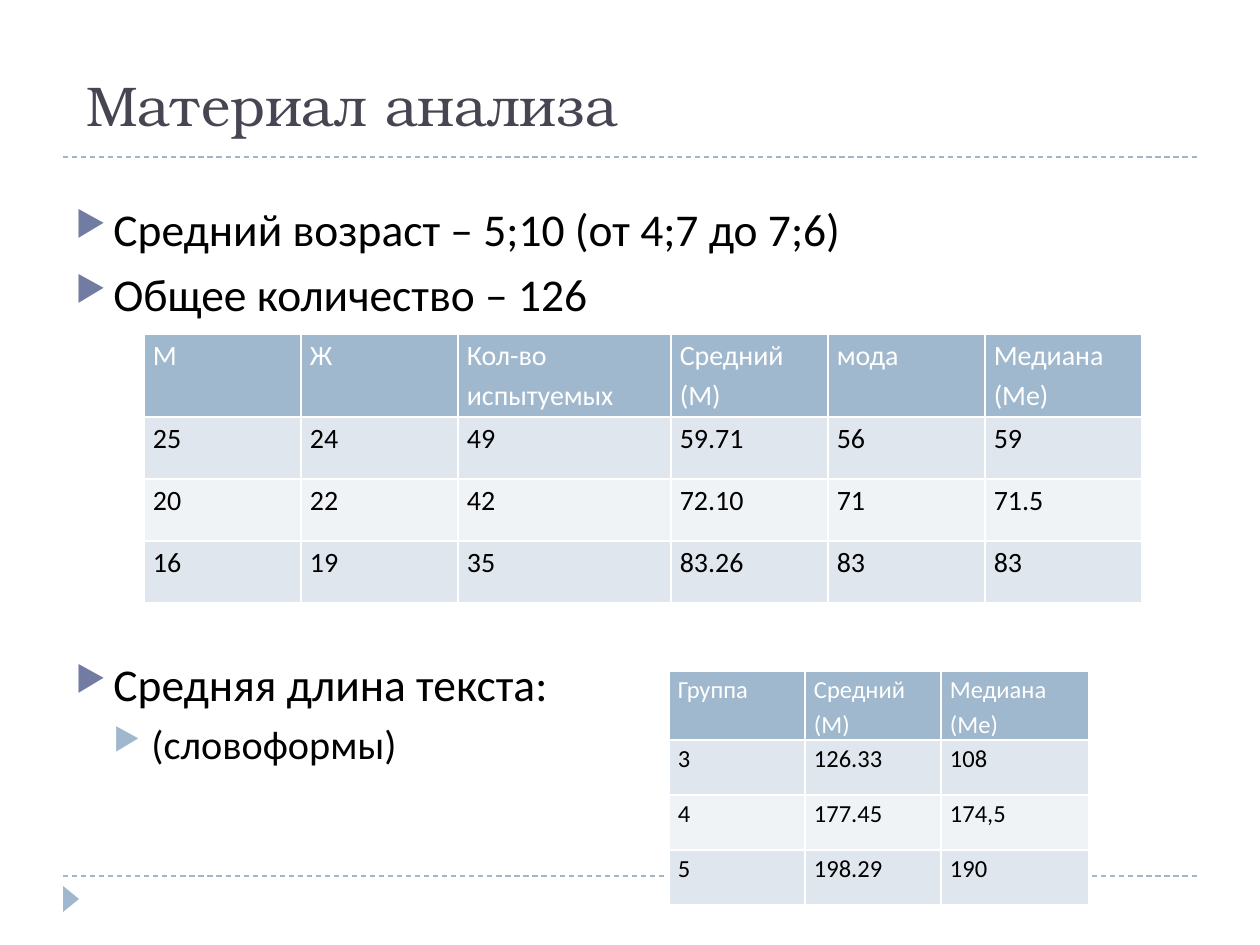
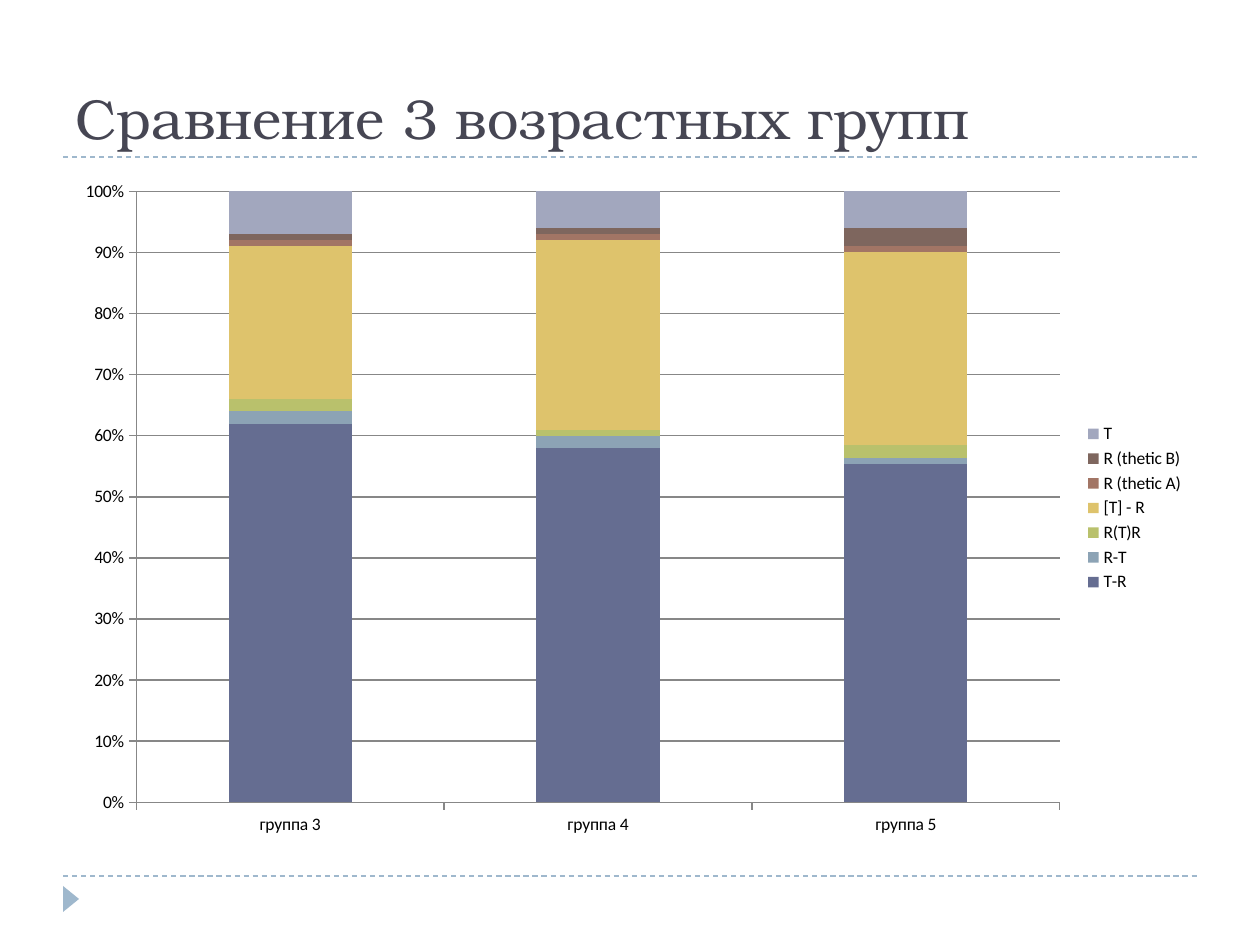
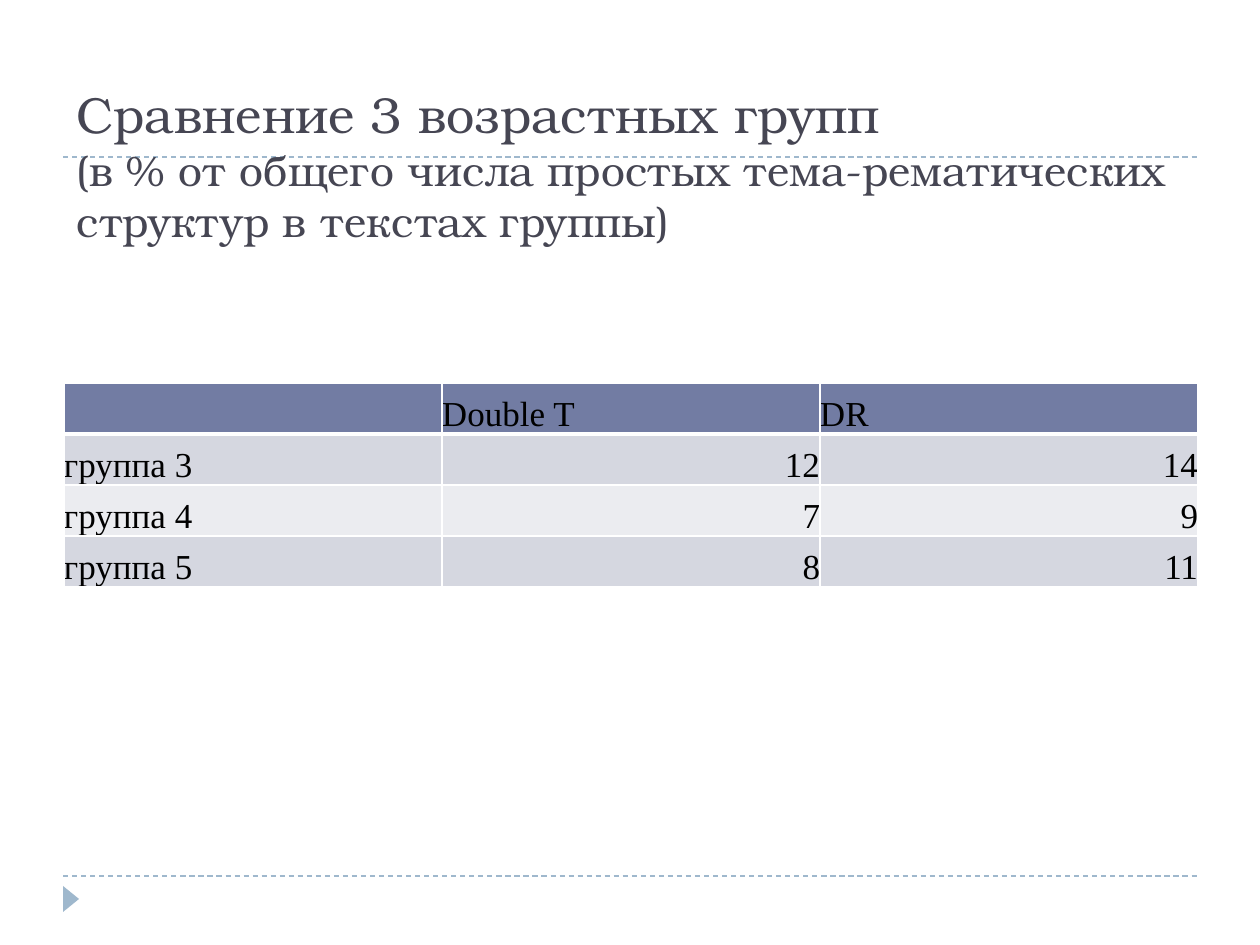
from lxml import etree
from pptx import Presentation
from pptx import util as u
from pptx.chart.data import CategoryChartData
from pptx.dml.color import RGBColor
from pptx.enum import chart as ch, dml, shapes, text
from pptx.oxml.ns import qn

PX_PER_INCH = 126
SANS, SERIF, TIMES = "Calibri", "TeX Gyre Bonum", "Times New Roman"
BLACK, WHITE, TITLE = "000000", "FFFFFF", "464653"
SLATE, SKY, GRID = "727CA3", "9FB8CD", "878787"
SKY_BANDS = ("DFE6ED", "F0F3F6")
SLATE_BANDS = ("D5D7E0", "EBECF0")
BULLETS = (
    {"size": 26, "indent": 38, "before": 6, "mark": SLATE},
    {"size": 23, "indent": 76, "before": 5, "mark": SKY},
)

AGE_ROWS = (
    ("М", "Ж", "Кол-во испытуемых", "Средний (M)", "мода", "Медиана (Me)"),
    ("25", "24", "49", "59.71", "56", "59"),
    ("20", "22", "42", "72.10", "71", "71.5"),
    ("16", "19", "35", "83.26", "83", "83"),
)
LENGTH_ROWS = (
    ("Группа", "Средний (M)", "Медиана (Me)"),
    ("3", "126.33", "108"),
    ("4", "177.45", "174,5"),
    ("5", "198.29", "190"),
)
DOUBLE_ROWS = (
    ("", "Double T", "DR"),
    ("группа 3", "12", "14"),
    ("группа 4", "7", "9"),
    ("группа 5", "8", "11"),
)
GROUPS = ("группа 3", "группа 4", "группа 5")
STRUCTURES = (
    ("T-R", (62, 58, 56), "656D91"),
    ("R-T", (2, 2, 1), "8CA3B5"),
    ("R(T)R", (2, 1, 2), "B9C16C"),
    ("[T] - R", (25, 31, 32), "DEC36C"),
    ("R (thetic A)", (1, 1, 1), "A27565"),
    ("R (thetic B)", (1, 1, 3), "7E665E"),
    ("T", (7, 6, 6), "A2A7BE"),
)


def px(length):
    """Turn px into EMU."""
    return u.Emu(round(length * 914400 / PX_PER_INCH))


def box(*lengths):
    """Turn left, top, width and height in px into EMU."""
    return [px(length) for length in lengths]


def rgb(color):
    """Turn a hex string into a colour."""
    return RGBColor.from_string(color)


def style_font(font, size, face, color):
    """Set size, typeface and colour of a font."""
    font.size = u.Pt(size)
    font.name = face
    font.color.rgb = rgb(color)


def add_run(paragraph, words, size, face, color):
    """Append one styled run."""
    run = paragraph.add_run()
    run.text = words
    style_font(run.font, size, face, color)


def add_rule(slide, top):
    """Draw a dashed rule across the slide."""
    rule = slide.shapes.add_connector(
        shapes.MSO_CONNECTOR.STRAIGHT, px(63), px(top), px(1197), px(top))
    rule.line.color.rgb = rgb(SKY)
    rule.line.width = u.Pt(0.75)
    rule.line.dash_style = dml.MSO_LINE.DASH
    etree.SubElement(rule._element.spPr, qn("a:effectLst"))


def add_frame(deck):
    """Add a blank slide with both rules and the footer marker."""
    slide = deck.slides.add_slide(deck.slide_layouts[6])
    add_rule(slide, 876)
    add_rule(slide, 157)
    marker = slide.shapes.add_shape(
        shapes.MSO_SHAPE.ISOSCELES_TRIANGLE, *box(58, 891, 26, 16))
    marker.rotation = 90
    marker.shadow.inherit = False
    marker.fill.solid()
    marker.fill.fore_color.rgb = rgb(SKY)
    marker.line.fill.background()
    return slide


def add_title(slide, place, *lines):
    """Add a bottom-anchored title from (words, size) lines."""
    frame = slide.shapes.add_textbox(*box(*place)).text_frame
    frame.word_wrap = True
    frame.vertical_anchor = text.MSO_ANCHOR.BOTTOM
    heading = frame.paragraphs[0]
    for number, (words, size) in enumerate(lines):
        if number:
            heading.add_line_break()
        add_run(heading, words, size, SERIF, TITLE)


def add_bullets(slide, place, *items):
    """Add bulleted paragraphs from (words, level) items."""
    frame = slide.shapes.add_textbox(*box(*place)).text_frame
    frame.word_wrap = True
    for number, (words, level) in enumerate(items):
        look = BULLETS[level]
        item = frame.add_paragraph() if number else frame.paragraphs[0]
        item.level = level
        item.space_before = u.Pt(look["before"])
        props = item._p.get_or_add_pPr()
        props.set("marL", str(px(look["indent"])))
        props.set("indent", str(-px(38)))
        mark = etree.SubElement(props, qn("a:buClr"))
        etree.SubElement(mark, qn("a:srgbClr"), val=look["mark"])
        etree.SubElement(props, qn("a:buSzPct"), val="76000")
        etree.SubElement(props, qn("a:buChar"), char="▶")
        add_run(item, words, look["size"], SANS, BLACK)


def add_border(cell, side, points):
    """Give one side of a cell a white border."""
    edge = etree.SubElement(
        cell._tc.get_or_add_tcPr(), qn(f"a:ln{side}"), w=str(u.Pt(points)))
    fill = etree.SubElement(edge, qn("a:solidFill"))
    etree.SubElement(fill, qn("a:srgbClr"), val=WHITE)


def add_grid(slide, corner, widths, heights, rows, *, size, face=SANS,
             head=SKY, head_ink=WHITE, bands=SKY_BANDS, inset=9,
             spacing=1.15, rule=1, anchor=text.MSO_ANCHOR.TOP,
             numbers=text.PP_ALIGN.LEFT):
    """Add a banded table with a coloured header row."""
    table = slide.shapes.add_table(
        len(rows), len(widths),
        *box(*corner, sum(widths), sum(heights))).table
    table.first_row = table.horz_banding = False
    for column, width in zip(table.columns, widths):
        column.width = px(width)
    for r, (height, values) in enumerate(zip(heights, rows)):
        table.rows[r].height = px(height)
        for c, value in enumerate(values):
            cell = table.cell(r, c)
            cell.margin_left = cell.margin_right = px(inset)
            cell.margin_top = cell.margin_bottom = 0
            cell.vertical_anchor = anchor
            for side in "LRTB":
                at_rule = (r, side) in ((0, "B"), (1, "T"))
                add_border(cell, side, rule if at_rule else 1)
            cell.fill.solid()
            cell.fill.fore_color.rgb = rgb(bands[(r - 1) % 2] if r else head)
            entry = cell.text_frame.paragraphs[0]
            entry.line_spacing = spacing
            if r and c:
                entry.alignment = numbers
            if value:
                add_run(entry, value, size, face, BLACK if r else head_ink)


def add_share_chart(slide, place):
    """Add the stacked shares of structures by group."""
    shares = CategoryChartData()
    shares.categories = GROUPS
    for name, values, _ in STRUCTURES:
        shares.add_series(name, values)
    chart = slide.shapes.add_chart(
        ch.XL_CHART_TYPE.COLUMN_STACKED_100, *box(*place), shares).chart
    style_font(chart.font, 10, SANS, BLACK)
    chart.has_title = False
    chart.has_legend = True
    chart.legend.position = ch.XL_LEGEND_POSITION.RIGHT
    chart.legend.include_in_layout = False
    plot = chart.plots[0]
    plot.vary_by_categories = False
    plot.gap_width = 150
    plot.overlap = 100
    for series, (_, _, color) in zip(plot.series, STRUCTURES):
        series.format.fill.solid()
        series.format.fill.fore_color.rgb = rgb(color)
    scale = chart.value_axis
    scale.has_major_gridlines = True
    scale.tick_labels.number_format = "0%"
    scale.tick_labels.number_format_is_linked = False
    for axis in (scale, chart.category_axis):
        axis.major_tick_mark = ch.XL_TICK_MARK.OUTSIDE
    for part in (scale, chart.category_axis, scale.major_gridlines):
        part.format.line.color.rgb = rgb(GRID)
        part.format.line.width = u.Pt(0.75)


def build_material(deck):
    """Build the slide on the analysed material."""
    slide = add_frame(deck)
    add_title(slide, (74, 55, 1134, 89), ("Материал анализа", 32))
    add_bullets(slide, (63, 195, 1134, 135),
                ("Средний возраст – 5;10 (от 4;7 до 7;6)", 0),
                ("Общее количество – 126", 0))
    add_bullets(slide, (63, 650, 600, 135),
                ("Средняя длина текста:", 0), ("(словоформы)", 1))
    add_grid(slide, (144, 334), (157, 157, 213, 157, 157, 157),
             (83, 62, 62, 62), AGE_ROWS, size=16)
    add_grid(slide, (669, 671), (136, 136, 148),
             (69, 55, 55, 55), LENGTH_ROWS, size=14)


def build_comparison(deck):
    """Build the chart slide comparing the groups."""
    slide = add_frame(deck)
    add_title(slide, (63, 21, 1134, 136), ("Сравнение 3 возрастных групп", 32))
    add_share_chart(slide, (63, 168, 1134, 680))


def build_doubles(deck):
    """Build the table slide comparing the groups."""
    slide = add_frame(deck)
    add_title(slide, (64, 116, 1134, 136),
              ("Сравнение 3 возрастных групп", 28.8),
              ("(в % от общего числа простых тема-рематических "
               "структур в текстах группы)", 24.3))
    add_grid(slide, (64, 383), (378,) * 3, (51,) * 4, DOUBLE_ROWS,
             size=20, face=TIMES, head=SLATE, head_ink=BLACK,
             bands=SLATE_BANDS, inset=0, spacing=1.0, rule=3,
             anchor=text.MSO_ANCHOR.BOTTOM, numbers=text.PP_ALIGN.RIGHT)


def main():
    """Build and save the deck."""
    deck = Presentation()
    deck.slide_width, deck.slide_height = px(1260), px(945)
    build_material(deck)
    build_comparison(deck)
    build_doubles(deck)
    deck.save("out.pptx")


if __name__ == "__main__":
    main()
